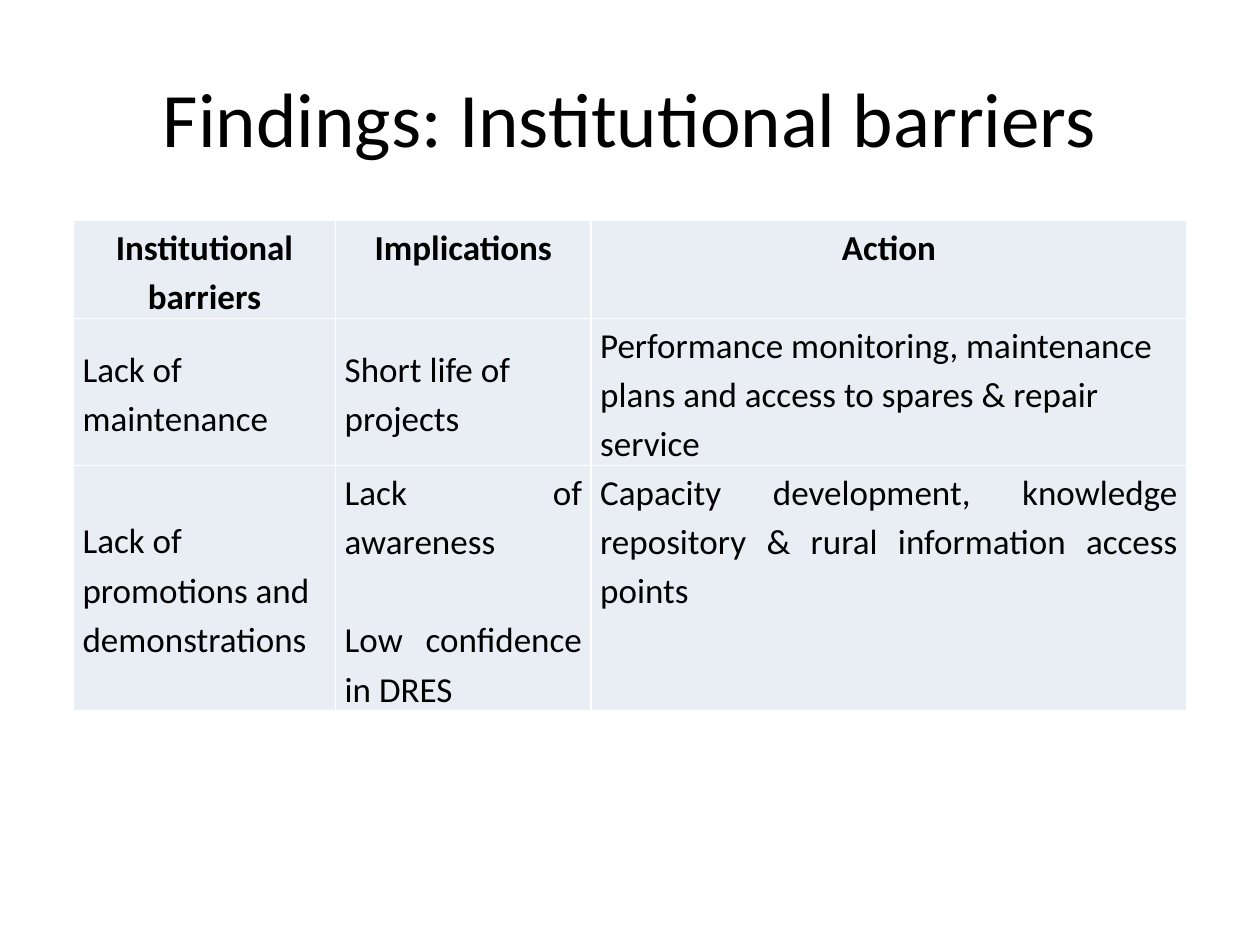
from lxml import etree
from pptx import Presentation
from pptx.dml.color import RGBColor
from pptx.enum import text as t
from pptx.oxml import ns
from pptx.util import Pt

BLACK = RGBColor(0x00, 0x00, 0x00)
WHITE = RGBColor(0xFF, 0xFF, 0xFF)
PALE_BLUE = RGBColor(0xE9, 0xED, 0xF4)

LEFT, CENTER, JUSTIFY = t.PP_ALIGN.LEFT, t.PP_ALIGN.CENTER, t.PP_ALIGN.JUSTIFY
TOP, MIDDLE = t.MSO_ANCHOR.TOP, t.MSO_ANCHOR.MIDDLE

COLUMN_WIDTHS = (149.8, 146, 340.4)
ROW_HEIGHTS = (56, 84, 140)
FINDINGS = (
    (
        (["Institutional barriers"], CENTER, TOP),
        (["Implications"], CENTER, TOP),
        (["Action"], CENTER, TOP),
    ),
    (
        (["Lack of maintenance"], LEFT, MIDDLE),
        (["Short life of projects"], LEFT, MIDDLE),
        (["Performance monitoring, maintenance plans and access to spares & repair service"], LEFT, MIDDLE),
    ),
    (
        (["Lack of promotions and demonstrations"], LEFT, MIDDLE),
        (["Lack of awareness", "Low confidence in DRES"], JUSTIFY, TOP),
        (["Capacity development, knowledge repository & rural information access points"], JUSTIFY, TOP),
    ),
)


class SlideWriter:
    font = "Calibri"
    title_size = 44
    body_size = 20
    line_spacing = 1.15
    paragraph_gap = 28
    side_margin = 5.2

    def __init__(self, slide):
        self.slide = slide

    def add_run(self, paragraph, wording, size, bold=False):
        run = paragraph.add_run()
        run.text = wording
        run.font.name = self.font
        run.font.size = Pt(size)
        run.font.bold = bold
        run.font.color.rgb = BLACK

    def title(self, wording, left, top, width, height):
        frame = self.slide.shapes.add_textbox(Pt(left), Pt(top), Pt(width), Pt(height)).text_frame
        frame.word_wrap = True
        frame.vertical_anchor = MIDDLE
        heading = frame.paragraphs[0]
        heading.alignment = CENTER
        self.add_run(heading, wording, self.title_size)

    def border(self, cell):
        properties = cell._tc.get_or_add_tcPr()
        for position, side in enumerate(("a:lnL", "a:lnR", "a:lnT", "a:lnB")):
            line = etree.Element(ns.qn(side), w=str(Pt(1)))
            fill = etree.SubElement(line, ns.qn("a:solidFill"))
            etree.SubElement(fill, ns.qn("a:srgbClr"), val=str(WHITE))
            properties.insert(position, line)

    def cell(self, cell, wordings, alignment, anchor, bold):
        cell.fill.solid()
        cell.fill.fore_color.rgb = PALE_BLUE
        cell.margin_left = cell.margin_right = Pt(self.side_margin)
        cell.margin_top = cell.margin_bottom = Pt(0)
        cell.vertical_anchor = anchor
        self.border(cell)
        frame = cell.text_frame
        for index, wording in enumerate(wordings):
            paragraph = frame.add_paragraph() if index else frame.paragraphs[0]
            paragraph.alignment = alignment
            paragraph.line_spacing = self.line_spacing
            if index:
                paragraph.space_before = Pt(self.paragraph_gap)
            self.add_run(paragraph, wording, self.body_size, bold)

    def table(self, rows, left, top, widths, heights):
        table = self.slide.shapes.add_table(
            len(rows), len(widths), Pt(left), Pt(top), Pt(sum(widths)), Pt(sum(heights))
        ).table
        table.horz_banding = False
        for column, width in zip(table.columns, widths):
            column.width = Pt(width)
        for row, height in zip(table.rows, heights):
            row.height = Pt(height)
        for r, row in enumerate(rows):
            for c, (wordings, alignment, anchor) in enumerate(row):
                self.cell(table.cell(r, c), wordings, alignment, anchor, bold=r == 0)


def main():
    deck = Presentation()
    deck.slide_width, deck.slide_height = Pt(720), Pt(540)
    writer = SlideWriter(deck.slides.add_slide(deck.slide_layouts[6]))
    writer.title("Findings: Institutional barriers", 36, 21.6, 648, 90)
    writer.table(FINDINGS, 42, 126, COLUMN_WIDTHS, ROW_HEIGHTS)
    deck.save("out.pptx")


if __name__ == "__main__":
    main()
